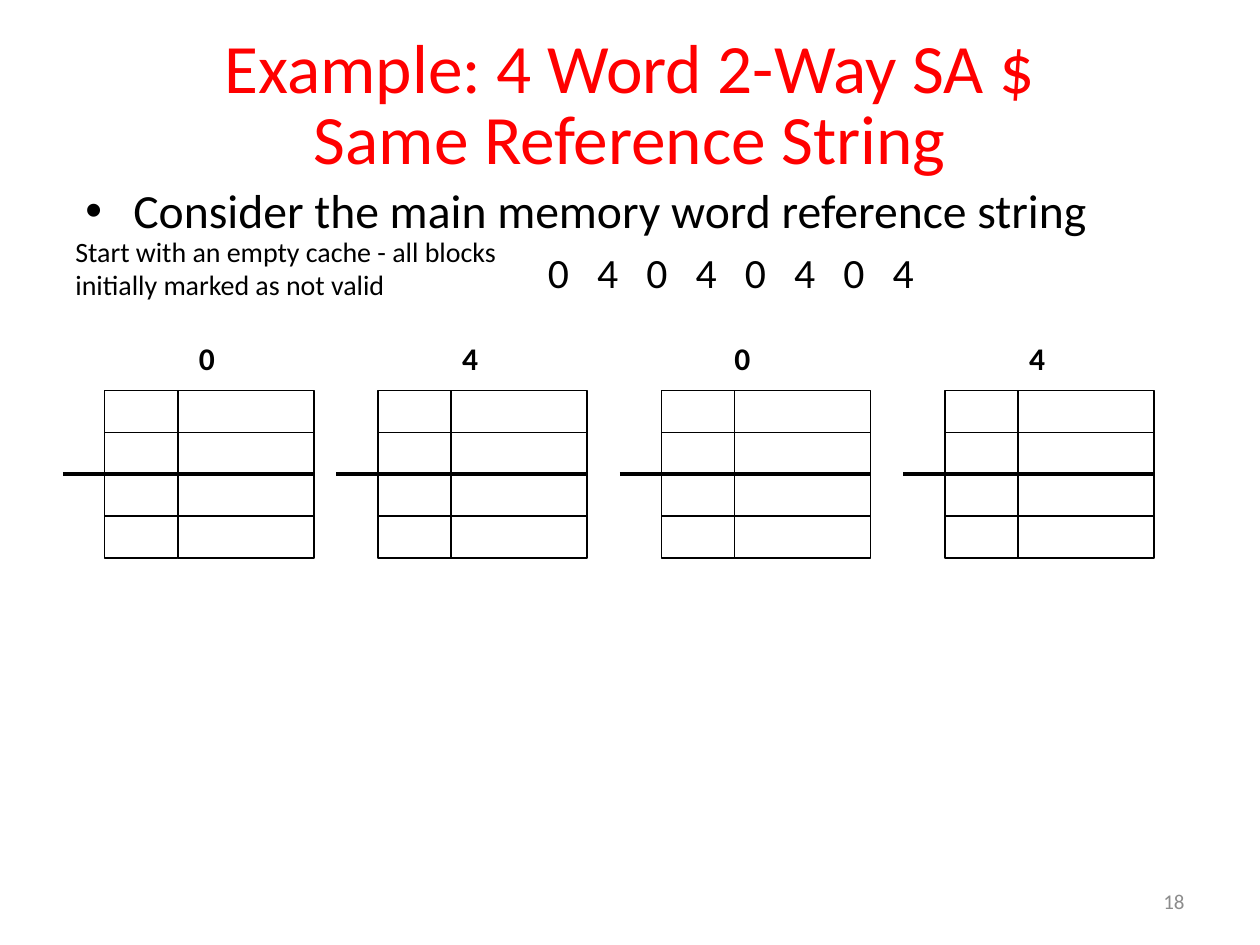
from pptx import Presentation
from pptx.dml.color import RGBColor
from pptx.enum.shapes import MSO_CONNECTOR, MSO_SHAPE
from pptx.enum.text import MSO_ANCHOR, PP_ALIGN
from pptx.oxml.ns import qn
from pptx.util import Inches, Pt
from lxml import etree

STRAIGHT = MSO_CONNECTOR.STRAIGHT
RECTANGLE = MSO_SHAPE.RECTANGLE
TOP, MIDDLE = MSO_ANCHOR.TOP, MSO_ANCHOR.MIDDLE
LEFT, CENTER, RIGHT = PP_ALIGN.LEFT, PP_ALIGN.CENTER, PP_ALIGN.RIGHT

BLACK = RGBColor(0x00, 0x00, 0x00)
RED = RGBColor(0xFF, 0x00, 0x00)
GRAY = RGBColor(0x8C, 0x8C, 0x8C)
FONT = "Calibri"

CACHE_TOP, CACHE_HEIGHT, ROWS = 3.1, 1.33, 4
TAG_WIDTH, DATA_WIDTH = 0.58, 1.08
SET_LINE_OVERHANG = 0.33
# Reference, left of its label, left of its cache
ACCESSES = [("0", 1.48, 0.83), ("4", 3.57, 3), ("0", 5.73, 5.25), ("4", 8.07, 7.5)]


def style(paragraph, size, color=BLACK, bold=False, align=LEFT):
    paragraph.alignment = align
    for run in paragraph.runs:
        font = run.font
        font.name, font.size, font.bold = FONT, Pt(size), bold
        font.color.rgb = color


def add_text(slide, text, box, size, color=BLACK, bold=False, align=LEFT,
             anchor=TOP, wrap=True):
    frame = slide.shapes.add_textbox(*map(Inches, box)).text_frame
    frame.word_wrap = wrap
    frame.vertical_anchor = anchor
    frame.text = text
    for paragraph in frame.paragraphs:
        style(paragraph, size, color, bold, align)
    return frame


def add_line(slide, left, right, y, width):
    line = slide.shapes.add_connector(
        STRAIGHT, Inches(left), Inches(y), Inches(right), Inches(y))
    line.line.color.rgb = BLACK
    line.line.width = Pt(width)
    etree.SubElement(line._element.spPr, qn("a:effectLst"))
    return line


def add_column(slide, left, width):
    """Add one outlined column of the cache, divided into rows."""
    column = slide.shapes.add_shape(
        RECTANGLE, Inches(left), Inches(CACHE_TOP), Inches(width), Inches(CACHE_HEIGHT))
    column.shadow.inherit = False
    column.fill.background()
    column.line.color.rgb = BLACK
    column.line.width = Pt(1)
    for row in range(1, ROWS):
        y = CACHE_TOP + row * CACHE_HEIGHT / ROWS
        divider = add_line(slide, left, left + width, y, 1)
        if row == ROWS / 2:
            divider.begin_connect(column, 1)
            divider.end_connect(column, 3)
    return column


def add_cache(slide, left):
    """Add the tag and data columns with the heavy line between the sets."""
    data_left = left + TAG_WIDTH
    add_column(slide, left, TAG_WIDTH)
    data = add_column(slide, data_left, DATA_WIDTH)
    set_line = add_line(slide, left - SET_LINE_OVERHANG, data_left + DATA_WIDTH,
                        CACHE_TOP + CACHE_HEIGHT / 2, 2.25)
    set_line.end_connect(data, 3)


def indent(paragraph, margin, first_line=0.0):
    properties = paragraph._p.get_or_add_pPr()
    properties.set("marL", str(Inches(margin)))
    properties.set("indent", str(Inches(first_line)))
    return properties


def add_reference_string(slide):
    frame = add_text(slide, "Consider the main memory word reference string",
                     (0.58, 1.39, 8.92, 0.89), 27.2)
    intro = frame.paragraphs[0]
    intro.space_before = Pt(4.5)
    properties = indent(intro, 0.38, -0.38)
    etree.SubElement(properties, qn("a:buFont"), typeface="Arial")
    etree.SubElement(properties, qn("a:buChar"), char="•")

    references = frame.add_paragraph()
    references.text = "0 4 0 4 0 4 0 4"
    style(references, 23.8)
    references.space_before = Pt(4.5)
    indent(references, 3.67)
    # Letter spacing, in hundredths of a point, sets the digits apart
    references.runs[0].font._element.set("spc", "538")


def main():
    prs = Presentation()
    prs.slide_width, prs.slide_height = Inches(10), Inches(7.5)
    slide = prs.slides.add_slide(prs.slide_layouts[6])

    title = add_text(slide, "", (0.5, 0.23, 9, 1.25), 39.6, anchor=MIDDLE)
    heading = title.paragraphs[0]
    heading.text = "Example: 4 Word 2-Way SA $\vSame Reference String"
    style(heading, 39.6, RED, align=CENTER)
    heading.line_spacing = 0.85

    for reference, label_left, cache_left in ACCESSES:
        add_cache(slide, cache_left)
        add_text(slide, reference, (label_left, 2.64, 0.34, 0.4), 18,
                 bold=True, wrap=False)

    add_reference_string(slide)
    add_text(slide, "Start with an empty cache - all blocks initially marked as not valid",
             (0.5, 1.81, 3.75, 0.64), 16)
    add_text(slide, "18", (7.17, 6.95, 2.33, 0.4), 12, GRAY, align=RIGHT, anchor=MIDDLE)
    prs.save("out.pptx")


if __name__ == "__main__":
    main()
